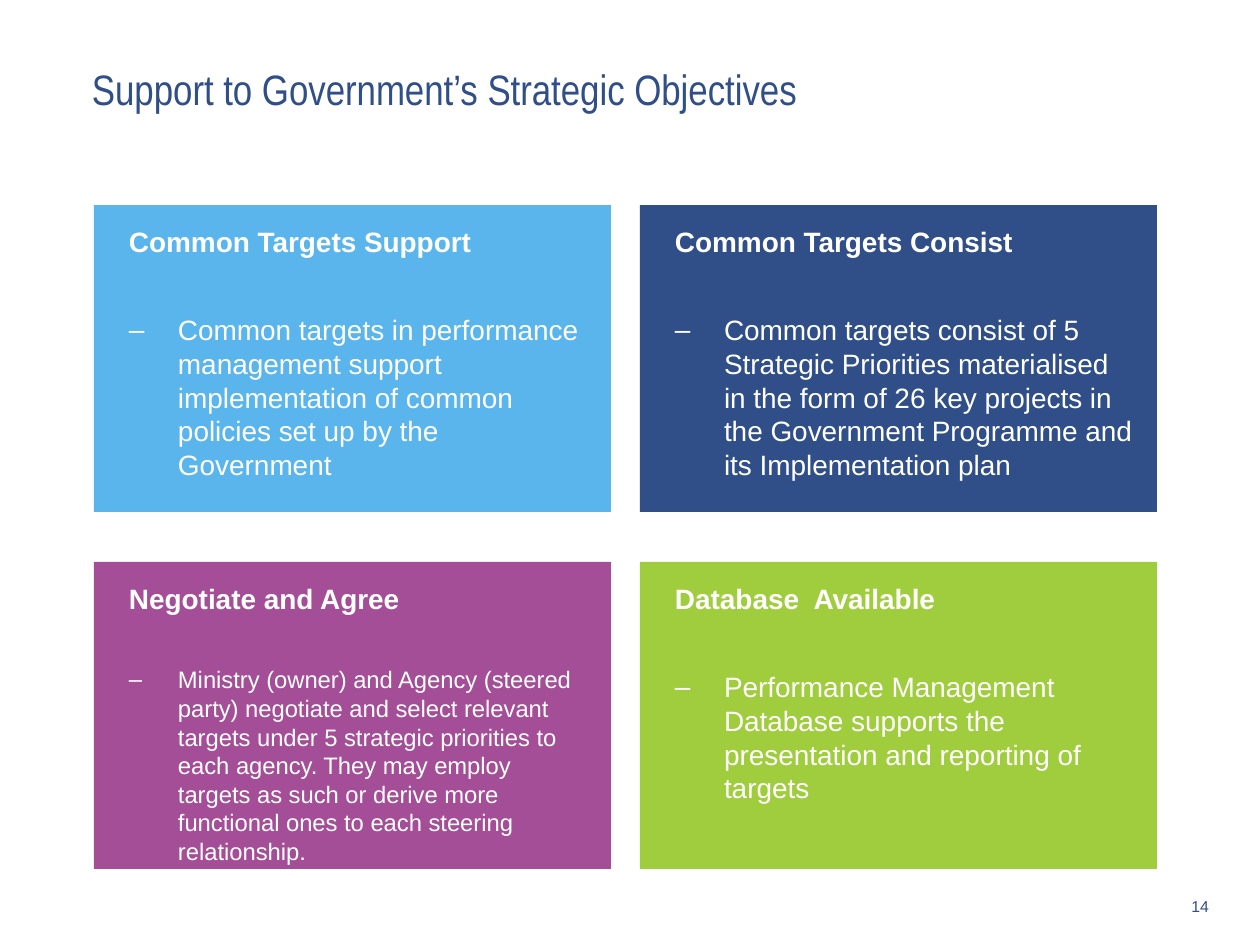
"""Build a slide with four coloured cards on the government's strategic objectives."""
from lxml import etree
from pptx import Presentation
from pptx import util as u
from pptx.dml import color
from pptx.enum import shapes, text
from pptx.oxml import ns

PX = 914400 / 126


def px(length):
    return u.Emu(round(length * PX))


def write(shape, words, size, hex_color, insets=(0, 0, 0, 0), font="Arial", bold=False):
    frame = shape.text_frame
    frame.word_wrap = True
    frame.margin_left, frame.margin_top, frame.margin_right, frame.margin_bottom = map(px, insets)
    paragraph = frame.paragraphs[0]
    paragraph.text = words
    paragraph.font.name = font
    paragraph.font.size = u.Pt(size)
    paragraph.font.bold = bold
    paragraph.font.color.rgb = color.RGBColor.from_string(hex_color)
    return frame, paragraph


presentation = Presentation()
presentation.slide_width, presentation.slide_height = px(1260), px(945)
slide = presentation.slides.add_slide(presentation.slide_layouts[6])

title = slide.shapes.add_textbox(px(79), px(59), px(1007), px(60))
frame, paragraph = write(title, "Support to Government’s Strategic Objectives", 24.3, "304E88",
                         (13, 0, 13, 0), "Arial Narrow")
frame.vertical_anchor = text.MSO_ANCHOR.MIDDLE

number = slide.shapes.add_textbox(px(1155), px(886), px(66), px(40))
frame, paragraph = write(number, "14", 9, "304E88", (12, 6, 12, 6))
frame.vertical_anchor = text.MSO_ANCHOR.MIDDLE
paragraph.alignment = text.PP_ALIGN.RIGHT

cards = [
    ("Common Targets Support", "5AB5EC", 16,
     "Common targets in performance management support implementation of common policies "
     "set up by the Government"),
    ("Common Targets Consist", "304E88", 16,
     "Common targets consist of 5 Strategic Priorities materialised in the form of 26 key "
     "projects in the Government Programme and its Implementation plan"),
    ("Negotiate and Agree", "A34E96", 13.6,
     "Ministry (owner) and Agency (steered party) negotiate and select relevant targets under "
     "5 strategic priorities to each agency. They may employ targets as such or derive more "
     "functional ones to each steering relationship."),
    ("Database  Available", "A0CD3D", 16,
     "Performance Management Database supports the presentation and reporting of targets"),
]

for index, (heading, fill, size, body) in enumerate(cards):
    row, column = divmod(index, 2)
    left, top = px(94 + 546 * column), px(205 + 357 * row)

    card = slide.shapes.add_shape(shapes.MSO_SHAPE.RECTANGLE, left, top, px(517), px(307))
    card.shadow.inherit = False
    card.fill.solid()
    card.fill.fore_color.rgb = color.RGBColor.from_string(fill)
    card.line.fill.background()
    frame, paragraph = write(card, body, size, "FFFFFF", (35, 76 + 2 * size, 23, 0))
    frame.vertical_anchor = text.MSO_ANCHOR.TOP
    paragraph.alignment = text.PP_ALIGN.LEFT
    properties = paragraph.font._element.getparent()
    properties.set("marL", str(px(49)))
    properties.set("indent", str(-px(49)))
    for tag, attributes in (("a:buFont", {"typeface": "Arial"}), ("a:buChar", {"char": "‒"})):
        bullet = etree.Element(ns.qn(tag), attributes)
        properties.insert(properties.index(paragraph.font._element), bullet)

    label = slide.shapes.add_textbox(left, top, px(517), px(69))
    write(label, heading, 16, "FFFFFF", (35, 20, 25, 0), bold=True)

presentation.save("out.pptx")
